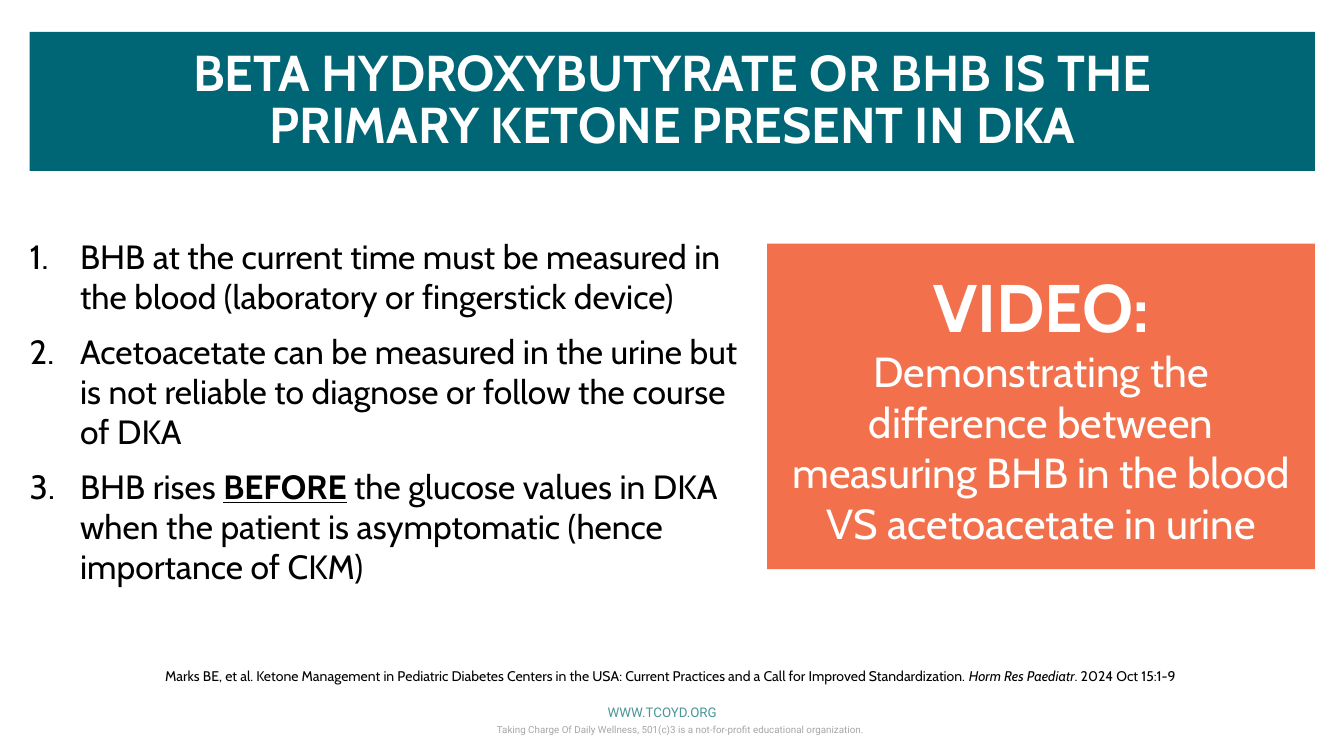
from pptx import Presentation
from pptx.dml.color import RGBColor
from pptx.enum.shapes import MSO_SHAPE
from pptx.enum.text import MSO_ANCHOR, PP_ALIGN
from pptx.oxml.ns import qn
from pptx.util import Pt
from lxml import etree

RECTANGLE = MSO_SHAPE.RECTANGLE
CENTER, LEFT = PP_ALIGN.CENTER, PP_ALIGN.LEFT
TOP, MIDDLE = MSO_ANCHOR.TOP, MSO_ANCHOR.MIDDLE

WIDTH, HEIGHT = 1920, 1080
MARGIN = 42.5
CONTENT_WIDTH = WIDTH - 2 * MARGIN + 1
VIDEO_WIDTH = 782.5
LIST_INDENT = 72
BLACK, WHITE, TEAL, ORANGE = "000000", "FFFFFF", "006574", "F2714C"
LINK_TEAL, GRAY = "4A9697", "A6A6A6"

TITLE = [[
    ("BETA HYDROXYBUTYRATE OR BHB IS THE", 72, "b"),
    ("\n", 72, ""),
    ("PRIMARY KETONE PRESENT IN DKA", 72, "b"),
]]
VIDEO = [[
    ("VIDEO:", 96, "b"),
    ("\n", 96, ""),
    ("Demonstrating the difference between measuring BHB in the blood VS acetoacetate in urine", 60, ""),
]]
FACTS = [
    [("BHB at the current time must be measured in the blood (laboratory or fingerstick device)", 48, "")],
    [("Acetoacetate can be measured in the urine but is not reliable to diagnose or follow the course of DKA", 48, "")],
    [
        ("BHB rises ", 48, ""),
        ("BEFORE", 48, "bu"),
        (" the glucose values in DKA when the patient is asymptomatic (hence importance of CKM)", 48, ""),
    ],
]
CITATION = [[
    ("Marks BE, et al. Ketone Management in Pediatric Diabetes Centers in the USA: "
     "Current Practices and a Call for Improved Standardization. ", 20, ""),
    ("Horm Res Paediatr", 20, "i"),
    (". 2024 Oct 15:1-9", 20, ""),
]]
WEBSITE = [[("WWW.TCOYD.ORG", 19, "")]]
FOOTER = [[("Taking Charge Of Daily Wellness, 501(c)3 is a not-for-profit educational organization.", 14, "")]]


def rgb(color):
    return RGBColor.from_string(color)


def write(shape, paragraphs, color, font="Cabin", align=CENTER, anchor=TOP,
          inset=(7.2, 3.6), wrap=True):
    frame = shape.text_frame
    frame.word_wrap = wrap
    frame.vertical_anchor = anchor
    frame.margin_left = frame.margin_right = Pt(inset[0])
    frame.margin_top = frame.margin_bottom = Pt(inset[1])
    for index, runs in enumerate(paragraphs):
        paragraph = frame.add_paragraph() if index else frame.paragraphs[0]
        paragraph.alignment = align
        for text, size, style in runs:
            if text == "\n":
                paragraph.add_line_break()
                continue
            run = paragraph.add_run()
            run.text = text
            run.font.name = font
            run.font.size = Pt(size)
            run.font.color.rgb = rgb(color)
            run.font.bold = "b" in style
            run.font.italic = "i" in style
            run.font.underline = "u" in style
    return frame


def add_text(slide, left, top, width, height, paragraphs, color, **options):
    box = slide.shapes.add_textbox(Pt(left), Pt(top), Pt(width), Pt(height))
    return write(box, paragraphs, color, **options)


def add_panel(slide, left, top, width, height, fill, paragraphs, inset):
    panel = slide.shapes.add_shape(RECTANGLE, Pt(left), Pt(top), Pt(width), Pt(height))
    panel.shadow.inherit = False
    panel.fill.solid()
    panel.fill.fore_color.rgb = rgb(fill)
    panel.line.fill.background()
    return write(panel, paragraphs, WHITE, anchor=MIDDLE, inset=(inset, inset))


def number_list(frame):
    for index, paragraph in enumerate(frame.paragraphs):
        if index:
            paragraph.space_before = Pt(20)
        properties = paragraph._p.get_or_add_pPr()
        properties.set("marL", str(Pt(LIST_INDENT)))
        properties.set("indent", str(-Pt(LIST_INDENT)))
        numbering = etree.SubElement(properties, qn("a:buAutoNum"))
        numbering.set("type", "arabicPeriod")


def main():
    presentation = Presentation()
    presentation.slide_width, presentation.slide_height = Pt(WIDTH), Pt(HEIGHT)
    slide = presentation.slides.add_slide(presentation.slide_layouts[6])

    add_text(slide, 534, 1030, 876, 24.5, FOOTER, GRAY, font="Roboto")
    add_text(slide, 82, 1003, 1728, 30, WEBSITE, LINK_TEAL, font="Roboto")
    facts = add_text(slide, MARGIN, 337, 1011, 520.5, FACTS, BLACK, align=LEFT, inset=(0, 0))
    number_list(facts)
    add_text(slide, 198.5, 949.5, 1518.5, 31.5, CITATION, BLACK, wrap=False)

    title = add_panel(slide, MARGIN, 45.5, CONTENT_WIDTH, 198.5, TEAL, TITLE, 21.6)
    title.paragraphs[0].line_spacing = Pt(75)
    video_left = MARGIN + CONTENT_WIDTH - VIDEO_WIDTH
    add_panel(slide, video_left, 348, VIDEO_WIDTH, 465, ORANGE, VIDEO, 28.8)

    presentation.save("out.pptx")


if __name__ == "__main__":
    main()
